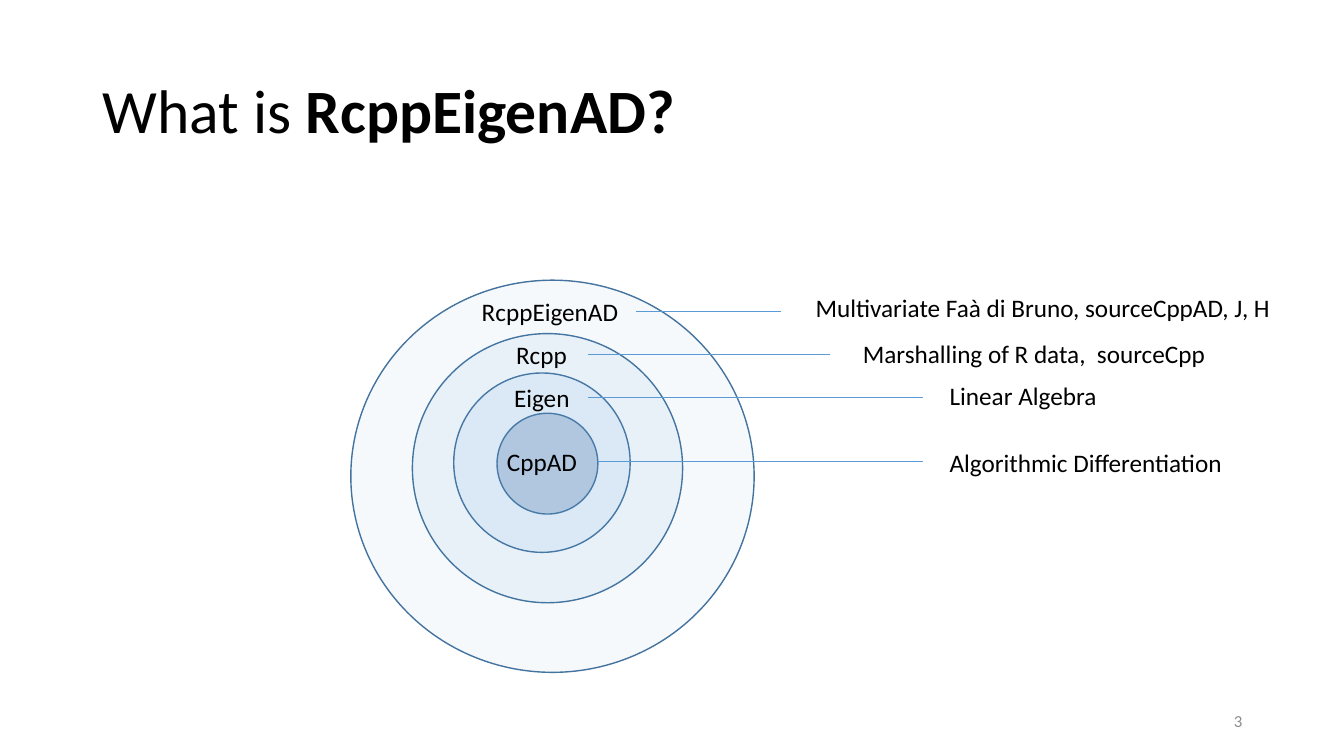
from lxml import etree
from pptx import Presentation
from pptx.dml.color import RGBColor
from pptx.enum.shapes import MSO_CONNECTOR, MSO_SHAPE
from pptx.enum.text import MSO_ANCHOR, MSO_AUTO_SIZE, PP_ALIGN
from pptx.oxml.ns import qn
from pptx.util import Emu, Pt

FONT = "Calibri"
BLACK, GRAY = "000000", "8C8C8C"
BLUE, NAVY, OUTLINE = "5B9BD5", "2F5597", "43739E"
LABEL_HEIGHT = 40

# left, top, width, height, fill, opacity in percent; innermost first
RINGS = [
    (493, 410, 100, 100, NAVY, 26),
    (450, 370, 175, 178, BLUE, 9),
    (409, 331, 268, 267, BLUE, 8),
    (348, 278, 400, 389, BLUE, 6),
]

# name, its left, top, width; line start, end, y; note, its left, top, width
LAYERS = [
    ("RcppEigenAD", 468, 289, 163, 631, 775, 309,
     "Multivariate Faà di Bruno, sourceCppAD, J, H", 799, 285, 498),
    ("Rcpp", 502, 332, 71, 583, 823, 352,
     "Marshalling of R data,  sourceCpp", 846, 331, 364),
    ("Eigen", 500, 374, 76, 583, 915, 394,
     "Linear Algebra", 932, 372, 168),
    ("CppAD", 493, 438, 90, 593, 915, 458,
     "Algorithmic Differentiation", 932, 439, 294),
]


def px(n):
    """Convert px (100 to the inch) to EMU."""
    return Emu(n * 9144)


def rgb(value):
    return RGBColor.from_string(value)


def style_font(font, size, color):
    font.name = FONT
    font.size = Pt(size)
    font.color.rgb = rgb(color)


def add_title(slide, plain, bold):
    title = slide.shapes.title
    title.left, title.top, title.width, title.height = map(px, (92, 40, 1150, 145))
    tf = title.text_frame
    tf.auto_size = MSO_AUTO_SIZE.NONE
    tf.vertical_anchor = MSO_ANCHOR.MIDDLE
    p = tf.paragraphs[0]
    p.alignment = PP_ALIGN.LEFT
    p.line_spacing = 0.9
    style_font(p.font, 44, BLACK)
    p.add_run().text = plain
    r = p.add_run()
    r.text = bold
    r.font.bold = True


def add_text(slide, text, left, top, width, size=18, color=BLACK, wrap=False,
             align=PP_ALIGN.LEFT, anchor=MSO_ANCHOR.TOP):
    box = slide.shapes.add_textbox(px(left), px(top), px(width), px(LABEL_HEIGHT))
    tf = box.text_frame
    tf.word_wrap = wrap
    tf.vertical_anchor = anchor
    p = tf.paragraphs[0]
    p.text = text
    p.alignment = align
    style_font(p.font, size, color)


def add_ring(slide, left, top, width, height, color, opacity):
    s = slide.shapes.add_shape(MSO_SHAPE.OVAL, px(left), px(top), px(width), px(height))
    s.shadow.inherit = False
    s.fill.solid()
    s.fill.fore_color.rgb = rgb(color)
    fill_color = s.fill._xPr.find(qn("a:solidFill"))[0]
    etree.SubElement(fill_color, qn("a:alpha"), val=str(opacity * 1000))
    s.line.color.rgb = rgb(OUTLINE)
    s.line.width = Pt(1)


def add_leader(slide, start, end, y):
    line = slide.shapes.add_connector(MSO_CONNECTOR.STRAIGHT, px(start), px(y), px(end), px(y))
    line.line.color.rgb = rgb(BLUE)
    line.line.width = Pt(0.5)
    etree.SubElement(line._element.spPr, qn("a:effectLst"))


def main():
    prs = Presentation()
    prs.slide_width, prs.slide_height = px(1333), px(750)
    slide = prs.slides.add_slide(prs.slide_layouts[5])

    add_title(slide, "What is ", "RcppEigenAD?")
    add_text(slide, "3", 942, 695, 300, size=12, color=GRAY, wrap=True,
             align=PP_ALIGN.RIGHT, anchor=MSO_ANCHOR.MIDDLE)
    for ring in RINGS:
        add_ring(slide, *ring)
    for name, left, top, width, start, end, y, note, note_left, note_top, note_width in LAYERS:
        add_text(slide, name, left, top, width)
        add_leader(slide, start, end, y)
        add_text(slide, note, note_left, note_top, note_width)

    prs.save("out.pptx")


if __name__ == "__main__":
    main()
